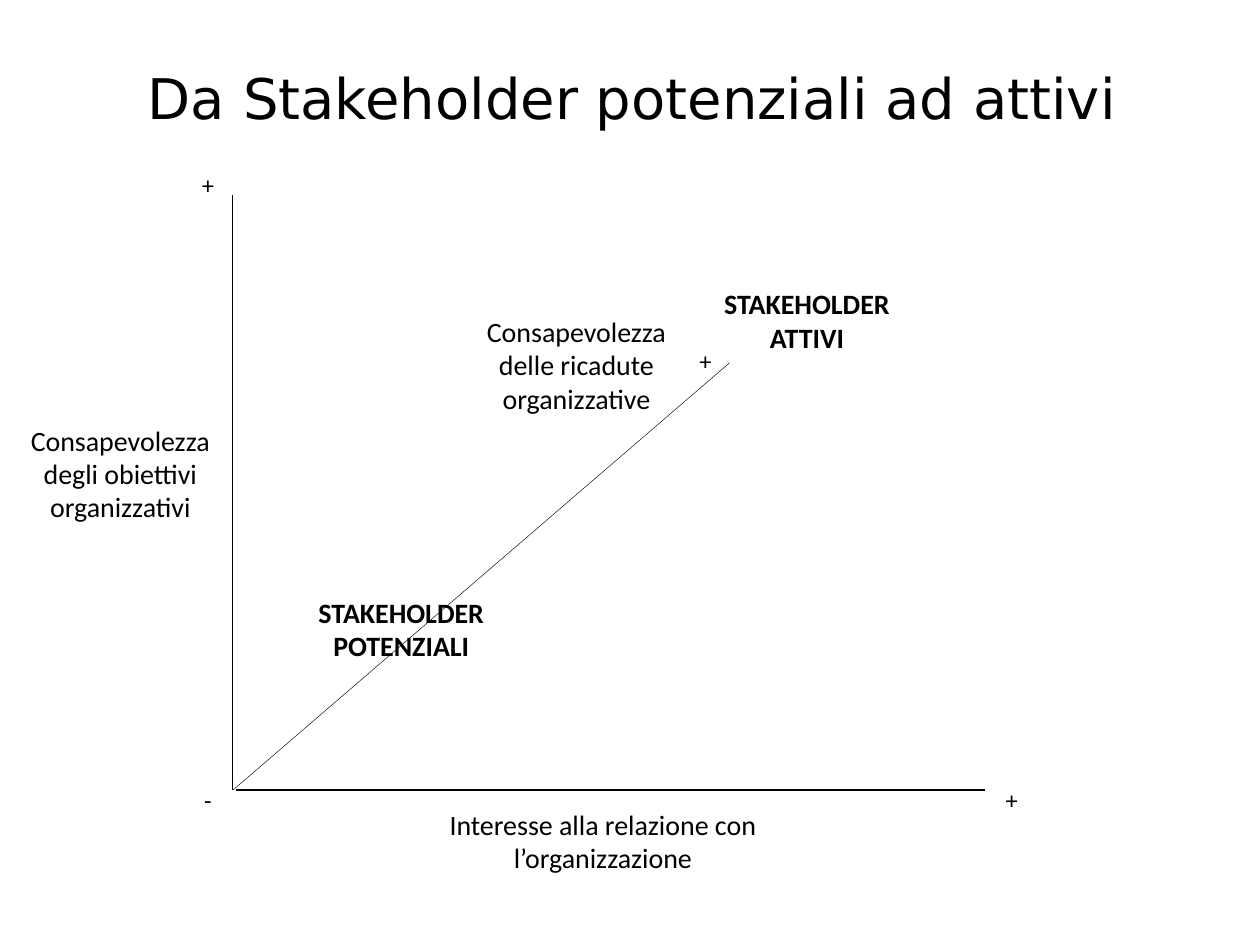
from lxml.etree import SubElement
from pptx import Presentation
from pptx.dml.color import RGBColor
from pptx.enum.shapes import MSO_CONNECTOR
from pptx.enum.text import MSO_ANCHOR, MSO_AUTO_SIZE, PP_ALIGN
from pptx.oxml.ns import qn
from pptx.util import Inches, Pt

BLACK = "000000"


def paint(color_format, hex_color):
    color_format.rgb = RGBColor.from_string(hex_color)


def write(box, text, size, font="Calibri", bold=False, line_height=None):
    """Fill a box with one centred paragraph, set tight to its top edge."""
    frame = box.text_frame
    frame.text = text
    frame.word_wrap = True
    frame.auto_size = MSO_AUTO_SIZE.NONE
    frame.vertical_anchor = MSO_ANCHOR.TOP
    frame.margin_left = frame.margin_right = frame.margin_bottom = 0
    frame.margin_top = Inches(0.02)
    para = frame.paragraphs[0]
    para.alignment = PP_ALIGN.CENTER
    para.space_before = Pt(0)
    if line_height:
        para.line_spacing = Pt(line_height)
    span = para.runs[0]
    span.font.name = font
    span.font.size = Pt(size)
    span.font.bold = bold
    paint(span.font.color, BLACK)


def add_title(slide, left, top, width, height):
    title = slide.shapes.title
    title.left, title.top = Inches(left), Inches(top)
    title.width, title.height = Inches(width), Inches(height)
    write(title, "Da Stakeholder potenziali ad attivi", 32, "DejaVu Sans")


def add_label(slide, text, left, top, width, height, bold=False):
    box = slide.shapes.add_textbox(
        Inches(left), Inches(top), Inches(width), Inches(height))
    write(box, text, 16, bold=bold, line_height=19)


def add_sign(slide, text, left, top):
    box = slide.shapes.add_textbox(
        Inches(left), Inches(top), Inches(0.12), Inches(0.26))
    write(box, text, 14)


def add_line(slide, start, end, weight):
    line = slide.shapes.add_connector(
        MSO_CONNECTOR.STRAIGHT, *map(Inches, start + end))
    line.line.width = Pt(weight)
    paint(line.line.color, BLACK)
    SubElement(line._element.spPr, qn("a:effectLst"))


def add_axes(slide, left, top, width, height):
    """Draw the two axes and the diagonal, with a sign at each end."""
    right, bottom = left + width, top + height
    tip_x, tip_y = left + 3.95, top + 1.33
    add_line(slide, (left, bottom), (left, top), 0.25)
    add_line(slide, (left + 0.03, bottom), (right, bottom), 0.75)
    add_line(slide, (left + 0.01, bottom), (tip_x, tip_y), 0.25)
    add_sign(slide, "+", left - 0.25, top - 0.22)
    add_sign(slide, "-", left - 0.25, bottom - 0.06)
    add_sign(slide, "+", right + 0.15, bottom - 0.06)
    add_sign(slide, "+", tip_x - 0.25, tip_y - 0.15)


def add_axis_names(slide):
    width, height = 1.45, 0.82
    add_label(slide, "Consapevolezza degli obiettivi organizzativi",
              0.23, 3.34, width, height)
    add_label(slide, "Consapevolezza delle ricadute organizzative",
              3.85, 2.48, width, height)
    add_label(slide, "Interesse alla relazione con l’organizzazione",
              3.55, 6.39, 2.47, 0.56)


def add_stakeholders(slide):
    for kind, left, top in (("ATTIVI", 5.73, 2.26), ("POTENZIALI", 2.51, 4.71)):
        add_label(slide, f"STAKEHOLDER {kind}", left, top, 1.35, 0.56, bold=True)


def main():
    deck = Presentation()
    deck.slide_width, deck.slide_height = Inches(10), Inches(7.5)
    slide = deck.slides.add_slide(deck.slide_layouts[5])
    add_title(slide, 1.15, 0.48, 7.74, 0.56)
    add_axes(slide, 1.84, 1.55, 5.98, 4.72)
    add_axis_names(slide)
    add_stakeholders(slide)
    deck.save("out.pptx")


if __name__ == "__main__":
    main()
